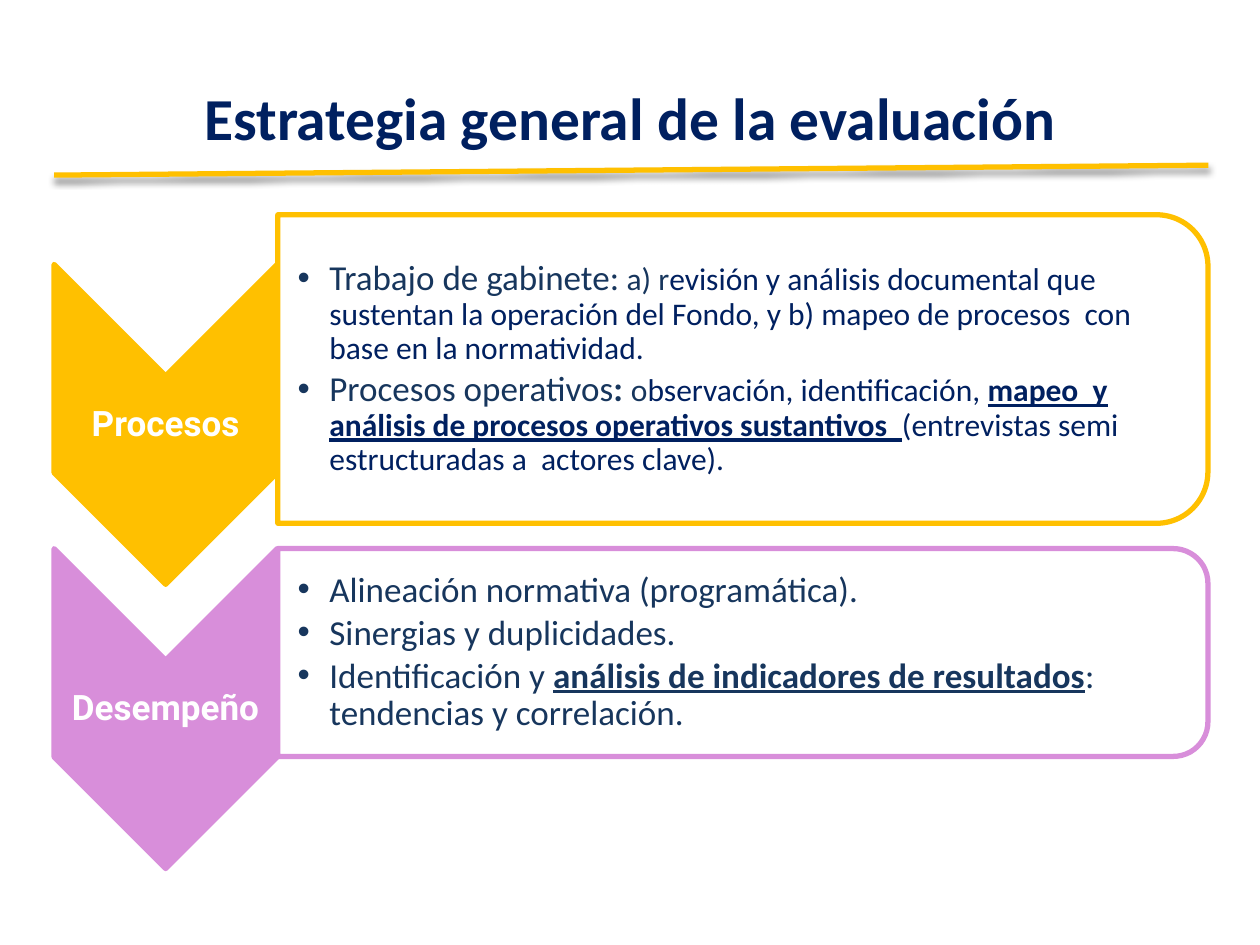
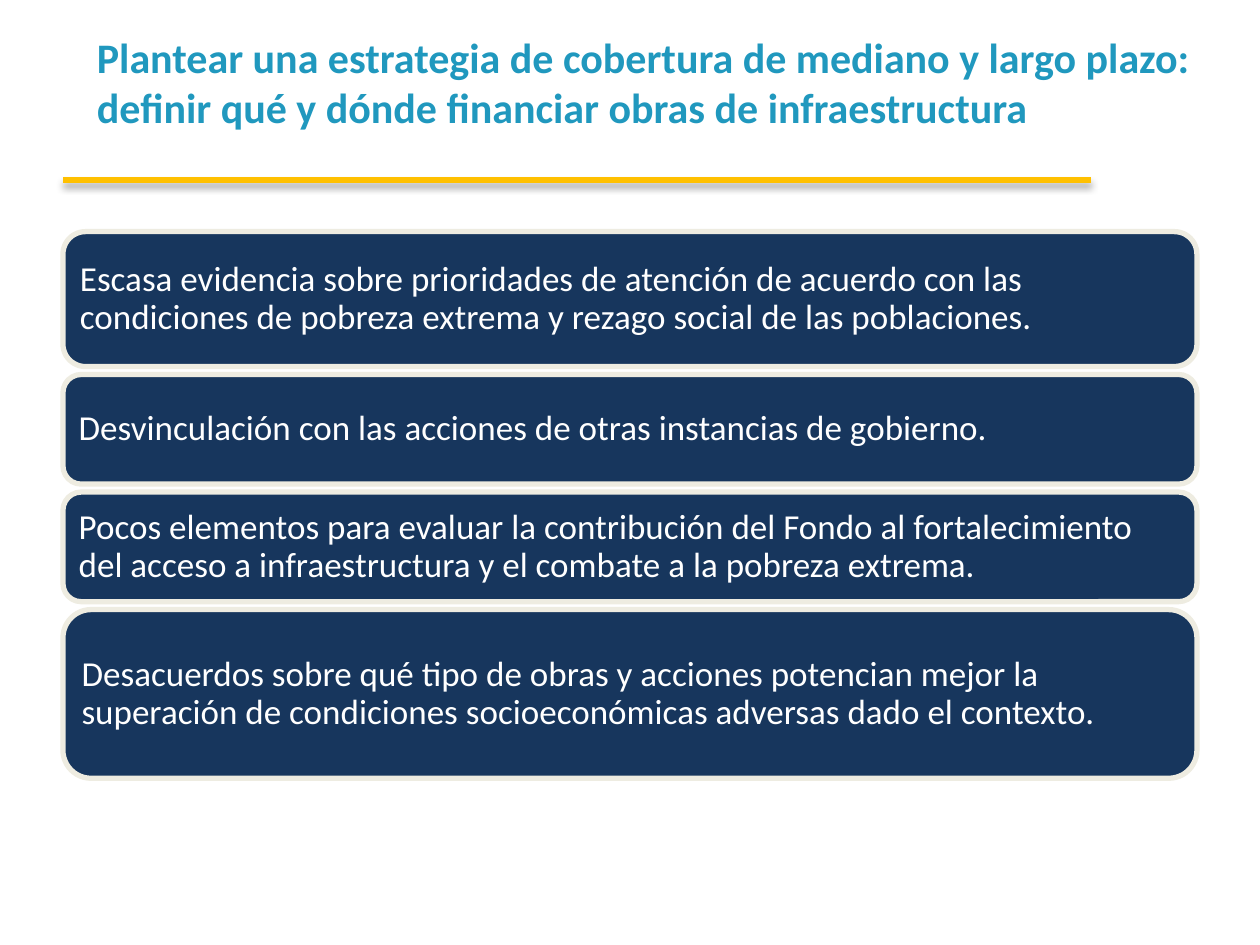
"""Build two slides on the strategy of the evaluation and the coverage plan."""
from dataclasses import dataclass

from lxml import etree
from pptx import Presentation
from pptx.dml.color import RGBColor
from pptx.enum.shapes import MSO_CONNECTOR, MSO_SHAPE
from pptx.enum.text import MSO_ANCHOR, MSO_AUTO_SIZE, PP_ALIGN
from pptx.oxml.ns import qn
from pptx.util import Cm, Pt

CHEVRON = MSO_SHAPE.CHEVRON
ROUNDED = MSO_SHAPE.ROUNDED_RECTANGLE
ROUNDED_END = MSO_SHAPE.ROUND_2_SAME_RECTANGLE
STRAIGHT = MSO_CONNECTOR.STRAIGHT
MIDDLE = MSO_ANCHOR.MIDDLE
NO_AUTOFIT = MSO_AUTO_SIZE.NONE
LEFT, CENTER = PP_ALIGN.LEFT, PP_ALIGN.CENTER


@dataclass(frozen=True)
class Theme:
    """Colours, fonts and sizes shared by the slides."""
    navy: str = "002060"
    slate: str = "17365D"
    teal: str = "2098BE"
    gold: str = "FFC000"
    orchid: str = "D88EDA"
    cream: str = "EEECE1"
    white: str = "FFFFFF"
    body_font: str = "Calibri"
    label_font: str = "Roboto"
    title_size: int = 34
    long_title_size: int = 24
    body_size: int = 20
    detail_size: int = 18
    line_width: int = 3
    line_spacing: float = 0.9


THEME = Theme()
LEAD = {"size": THEME.body_size, "color": THEME.slate}
LEAD_STRONG = LEAD | {"bold": True, "underline": True}
DETAIL_LEAD = LEAD | {"size": THEME.detail_size}
DETAIL = DETAIL_LEAD | {"color": THEME.navy}
DETAIL_STRONG = DETAIL | {"bold": True, "underline": True}
ON_DARK = {"size": THEME.body_size, "color": THEME.white}
LABEL = ON_DARK | {"name": THEME.label_font, "bold": True}


class Deck:
    """Hold the theme and the current slide, and draw each kind of element."""

    def __init__(self, theme):
        """Start an empty presentation."""
        self.theme = theme
        self.presentation = Presentation()
        self.presentation.slide_width = Cm(25.4)
        self.presentation.slide_height = Cm(19.05)
        self.slide = None

    def new_slide(self, title, box, align, style):
        """Add a slide and set its title."""
        self.slide = self.presentation.slides.add_slide(self.presentation.slide_layouts[5])
        heading = self.slide.shapes.title
        for name, value in zip(("left", "top", "width", "height"), box):
            setattr(heading, name, Cm(value))
        self.set_text(heading.text_frame, [[(title, {"bold": True} | style)]], align, spacing=1.0)

    def format_font(self, font, style):
        """Apply a dict of format values to a font."""
        for name, value in ({"name": self.theme.body_font} | style).items():
            if name == "color":
                font.color.rgb = RGBColor.from_string(value)
            else:
                setattr(font, name, Pt(value) if name == "size" else value)

    def set_text(self, frame, paragraphs, align=LEFT, spacing=None, insets=None, bullets=False):
        """Fill a text frame with paragraphs of styled runs."""
        settings = {"word_wrap": True, "auto_size": NO_AUTOFIT, "vertical_anchor": MIDDLE}
        for side, inset in zip(("left", "top", "right", "bottom"), insets or ()):
            settings[f"margin_{side}"] = Cm(inset)
        for name, value in settings.items():
            setattr(frame, name, value)
        for index, runs in enumerate(paragraphs):
            paragraph = frame.add_paragraph() if index else frame.paragraphs[0]
            if bullets:
                self.add_bullet(paragraph)
            paragraph.alignment = align
            paragraph.line_spacing = spacing or self.theme.line_spacing
            for text, style in runs:
                run = paragraph.add_run()
                run.text = text
                self.format_font(run.font, style)

    def add_bullet(self, paragraph):
        """Give a paragraph a hanging round bullet."""
        properties = paragraph._p.get_or_add_pPr()
        for name, value in {"marL": Cm(0.64), "indent": Cm(-0.64)}.items():
            properties.set(name, str(int(value)))
        etree.SubElement(properties, qn("a:buFont"), typeface="Arial")
        etree.SubElement(properties, qn("a:buChar"), char="•")
        paragraph.level = 1
        paragraph.space_after = Pt(3)

    def text(self, box, paragraphs, **options):
        """Add a text box."""
        frame = self.slide.shapes.add_textbox(*map(Cm, box)).text_frame
        self.set_text(frame, paragraphs, **options)

    def shape(self, kind, box, fill, line, turned=False, opacity=None):
        """Add a preset shape that covers the box, a quarter turned if asked."""
        left, top, width, height = box
        if turned:
            shift = (width - height) / 2
            left, top, width, height = left + shift, top - shift, height, width
        shape = self.slide.shapes.add_shape(kind, Cm(left), Cm(top), Cm(width), Cm(height))
        shape.rotation = 90 if turned else 0
        shape.shadow.inherit = False
        shape.fill.solid()
        shape.fill.fore_color.rgb = RGBColor.from_string(fill)
        self.stroke(shape.line, line)
        if opacity:
            color = shape._element.spPr.find(qn("a:solidFill"))[0]
            etree.SubElement(color, qn("a:alpha"), val=str(opacity * 1000))
        return shape

    def stroke(self, line, color):
        """Set the colour and the shared width of a line."""
        line.color.rgb = RGBColor.from_string(color)
        line.width = Pt(self.theme.line_width)

    def rule(self, *ends):
        """Add the gold rule under a title, with a soft shadow."""
        rule = self.slide.shapes.add_connector(STRAIGHT, *map(Cm, ends))
        self.stroke(rule.line, self.theme.gold)
        effects = etree.SubElement(rule._element.spPr, qn("a:effectLst"))
        shadow = etree.SubElement(effects, qn("a:outerShdw"), blurRad=str(int(Pt(4))),
                                  dist=str(int(Pt(3))), dir="5400000", rotWithShape="0")
        color = etree.SubElement(shadow, qn("a:srgbClr"), val="000000")
        etree.SubElement(color, qn("a:alpha"), val="43000")

    def stage(self, label, color, chevron_top, panel_top, panel_height, points):
        """Add a labelled chevron and the panel with its points."""
        left, width, panel_left, panel_width = 1.09, 4.5, 5.6, 18.75
        self.shape(CHEVRON, (left, chevron_top, width, 6.45), color, color, turned=True)
        self.text((left, chevron_top + 2.28, width, 1.93), [[(label, LABEL)]],
                  align=CENTER, insets=[0.03] * 4)
        self.shape(ROUNDED_END, (panel_left, panel_top, panel_width, panel_height),
                   self.theme.white, color, turned=True, opacity=90)
        corner = panel_height * 0.05
        self.text((panel_left, panel_top + corner, panel_width - corner,
                   panel_height - 2 * corner), points,
                  insets=(0.4, 0.03, 0.03, 0.03), bullets=True)

    def card(self, top, height, statement):
        """Add a dark rounded card with a statement."""
        card = self.shape(ROUNDED, (1.27, top, 22.86, height), self.theme.slate, self.theme.cream)
        self.set_text(card.text_frame, [[(statement, ON_DARK)]], insets=[0.21] * 4)


def build_strategy(deck):
    """Build the slide on the general strategy."""
    deck.new_slide("Estrategia general de la evaluación", (1.27, 0.76, 22.86, 3.18), CENTER,
                   {"size": THEME.title_size, "color": THEME.navy})
    deck.rule(1.09, 3.53, 24.36, 3.33)
    deck.stage("Procesos", THEME.gold, 5.33, 4.33, 6.22, [
        [("Trabajo de gabinete:", LEAD), (" a) r", DETAIL_LEAD),
         ("evisión y análisis documental que sustentan la operación del Fondo, "
          "y b) mapeo de procesos  con base en la normatividad.", DETAIL)],
        [("Procesos operativos", LEAD), (": ", LEAD | {"bold": True}), ("o", DETAIL_LEAD),
         ("bservación, identificación, ", DETAIL),
         ("mapeo  y análisis de procesos operativos sustantivos  ", DETAIL_STRONG),
         ("(entrevistas semi estructuradas a  actores clave).", DETAIL)],
    ])
    deck.stage("Desempeño", THEME.orchid, 11.06, 11.06, 4.19, [
        [("Alineación normativa (programática).", LEAD)],
        [("Sinergias y duplicidades.", LEAD)],
        [("Identificación y ", LEAD),
         ("análisis de indicadores de resultados", LEAD_STRONG),
         (": tendencias y correlación.", LEAD)],
    ])


def build_coverage(deck):
    """Build the slide on the coverage strategy."""
    deck.new_slide("Plantear una estrategia de cobertura de mediano y largo plazo: "
                   "definir qué y dónde financiar obras de infraestructura",
                   (1.7, 0.58, 22.86, 2.13), LEFT,
                   {"size": THEME.long_title_size, "color": THEME.teal})
    deck.rule(1.27, 3.63, 22, 3.63)
    top, gap = 4.67, 0.16
    for height, statement in (
        (2.72, "Escasa evidencia sobre prioridades de atención de acuerdo con las "
               "condiciones de pobreza extrema y rezago social de las poblaciones."),
        (2.21, "Desvinculación con las acciones de otras instancias de gobierno."),
        (2.21, "Pocos elementos para evaluar la contribución del Fondo al fortalecimiento "
               "del acceso a infraestructura y el combate a la pobreza extrema."),
        (3.4, "Desacuerdos sobre qué tipo de obras y acciones potencian mejor la "
              "superación de condiciones socioeconómicas adversas dado el contexto."),
    ):
        deck.card(top, height, statement)
        top += height + gap


def main():
    """Build and save the slides."""
    deck = Deck(THEME)
    build_strategy(deck)
    build_coverage(deck)
    deck.presentation.save("out.pptx")


if __name__ == "__main__":
    main()
